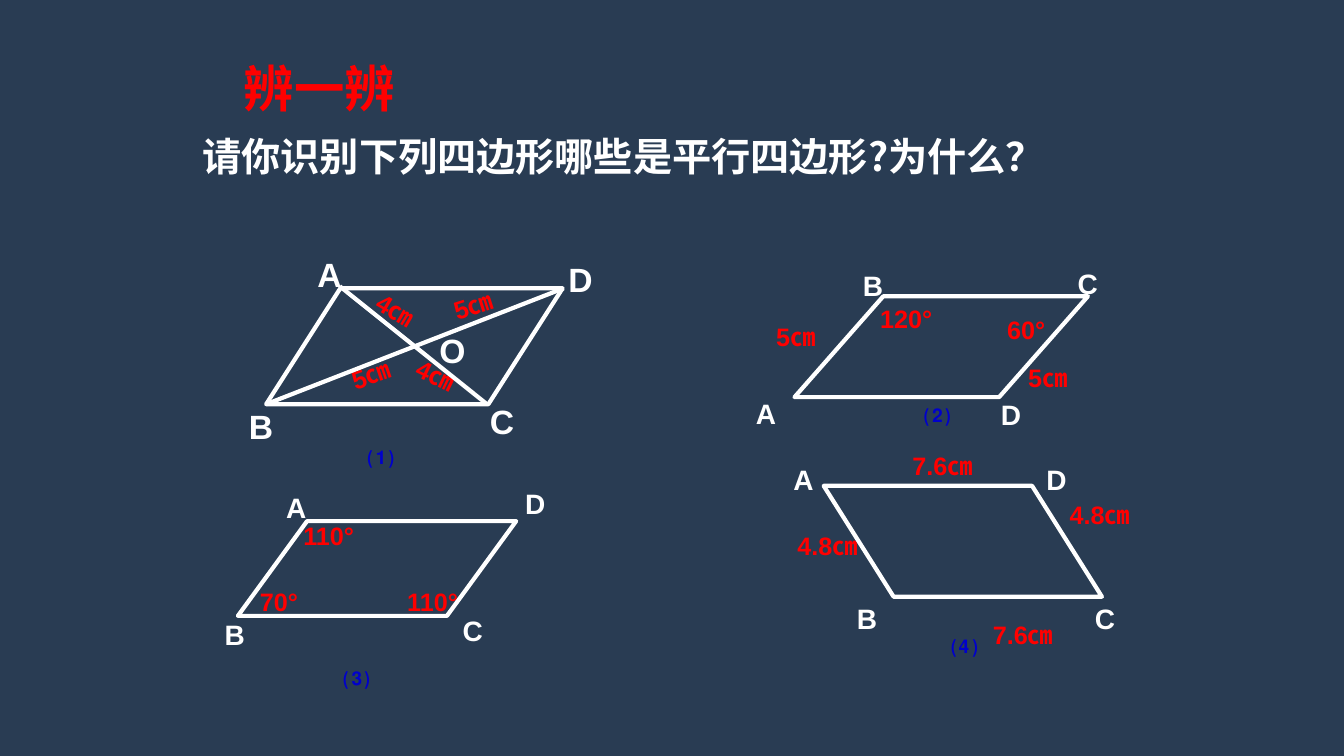
import pptx
import pptx.util
import pptx.dml.color
import pptx.enum.shapes
import pptx.enum.text
import pptx.oxml.ns
import lxml.etree

RGBColor = pptx.dml.color.RGBColor
NAVY = RGBColor(0x29, 0x3C, 0x53)
WHITE = RGBColor(0xFF, 0xFF, 0xFF)
RED = RGBColor(0xFF, 0x00, 0x00)
BLUE = RGBColor(0x00, 0x00, 0xCC)

LATIN_FONT = "Arial"
CHINESE_FONT = "Noto Sans CJK SC"
COLUMNS, ROWS = 13.33, 7.5

FIGURES = [
    {
        "number": ("⑴", 3.55, 4.31),
        "outline": (2.64, 2.86, 2.94, 1.15), "slant": 0.64,
        "vertex_size": 24, "vertex_box": (0.44, 0.5),
        "vertices": [("A", 3.05, 2.47), ("B", 2.37, 3.98), ("C", 4.76, 3.93),
                     ("D", 5.54, 2.52), ("O", 4.26, 3.22)],
        "diagonals": [((2.64, 4.01), (5.59, 2.86)), ((4.83, 4.01), (3.37, 2.84))],
        "measures": [("5㎝", 3.38, 3.48, 0.79, -19), ("5㎝", 4.39, 2.77, 0.96, -17.9),
                     ("4㎝", 3.62, 2.92, 0.78, 30.7), ("4㎝", 4.02, 3.56, 0.78, 25.8)],
    },
    {
        "number": ("⑵", 9.07, 3.89),
        "outline": (7.88, 2.94, 2.91, 1), "slant": 0.88,
        "vertices": [("A", 7.4, 3.88), ("B", 8.46, 2.61), ("C", 10.59, 2.59), ("D", 9.83, 3.89)],
        "measures": [("120°", 8.63, 2.96, 1.09), ("60°", 9.89, 3.07, 1.06),
                     ("5㎝", 7.6, 3.14, 1.23), ("5㎝", 10.1, 3.55, 1.24)],
    },
    {
        "number": ("⑶", 3.31, 6.5),
        "outline": (2.36, 5.17, 2.76, 0.94), "slant": 0.73,
        "vertices": [("A", 2.74, 4.82), ("B", 2.13, 6.08), ("C", 4.49, 6.04), ("D", 5.11, 4.78)],
        "measures": [("110°", 2.91, 5.11, 1.34), ("70°", 2.48, 5.77, 1.15),
                     ("110°", 3.94, 5.77, 1.26)],
    },
    {
        "number": ("⑷", 9.34, 6.18),
        "outline": (8.17, 4.82, 2.76, 1.1), "slant": 0.63, "mirrored": True,
        "vertices": [("A", 7.77, 4.54), ("B", 8.4, 5.92), ("C", 10.76, 5.92), ("D", 10.28, 4.54)],
        "measures": [("4.8㎝", 7.81, 5.21, 1.12), ("4.8㎝", 10.51, 4.9, 0.94),
                     ("7.6㎝", 8.95, 4.42, 0.94), ("7.6㎝", 9.75, 6.09, 0.94)],
    },
]


def write_text(text_frame, text, size, color, latin_font=LATIN_FONT):
    run = text_frame.paragraphs[0].add_run()
    run.text = text
    run.font.size = pptx.util.Pt(size)
    run.font.bold = True
    run.font.name = latin_font
    run.font.color.rgb = color
    east_asian = lxml.etree.SubElement(run.font._element, pptx.oxml.ns.qn("a:ea"))
    east_asian.set("typeface", CHINESE_FONT)
    run.font._element.find(pptx.oxml.ns.qn("a:latin")).addnext(east_asian)


class GeometrySlide:
    line_color = WHITE
    line_width = pptx.util.Pt(3)

    def __init__(self, presentation):
        self.column = presentation.slide_width / COLUMNS
        self.row = presentation.slide_height / ROWS
        self.slide = presentation.slides.add_slide(presentation.slide_layouts[6])
        background = self.slide.background.fill
        background.solid()
        background.fore_color.rgb = NAVY

    def place(self, column, row):
        return round(column * self.column), round(row * self.row)

    def draw_line(self, line):
        line.color.rgb = self.line_color
        line.width = self.line_width

    def label(self, text, left, top, width, height=0.4, rotation=0, wrap=False, **text_format):
        shape = self.slide.shapes.add_textbox(*self.place(left, top), *self.place(width, height))
        shape.rotation = rotation
        shape.text_frame.word_wrap = wrap
        shape.text_frame.auto_size = pptx.enum.text.MSO_AUTO_SIZE.SHAPE_TO_FIT_TEXT
        write_text(shape.text_frame, text, **text_format)

    def parallelogram(self, left, top, width, height, slant, mirrored):
        shape = self.slide.shapes.add_shape(
            pptx.enum.shapes.MSO_SHAPE.PARALLELOGRAM,
            *self.place(left, top), *self.place(width, height))
        shape.adjustments[0] = slant
        shape.fill.background()
        shape.shadow.inherit = False
        self.draw_line(shape.line)
        if mirrored:
            shape._element.spPr.find(pptx.oxml.ns.qn("a:xfrm")).set("flipH", "1")

    def diagonal(self, start, end):
        connector = self.slide.shapes.add_connector(
            pptx.enum.shapes.MSO_CONNECTOR.STRAIGHT, *self.place(*start), *self.place(*end))
        self.draw_line(connector.line)
        lxml.etree.SubElement(connector._element.spPr, pptx.oxml.ns.qn("a:effectLst"))

    def figure(self, number, outline, slant, vertices, measures, diagonals=(),
               mirrored=False, vertex_size=20, vertex_box=(0.4, 0.44)):
        for text, left, top, width, *rotation in measures:
            self.label(text, left, top, width, rotation=rotation[0] if rotation else 0,
                       wrap=True, size=18, color=RED)
        self.parallelogram(*outline, slant, mirrored)
        for start, end in diagonals:
            self.diagonal(start, end)
        for text, left, top in vertices:
            self.label(text, left, top, *vertex_box, size=vertex_size, color=WHITE)
        self.label(*number, 0.45, size=18, color=BLUE)


def main():
    presentation = pptx.Presentation()
    presentation.slide_width = pptx.util.Inches(COLUMNS)
    presentation.slide_height = pptx.util.Inches(ROWS)
    page = GeometrySlide(presentation)
    page.label("辨一辨", 2.32, 0.52, 1.71, 0.71, size=36, color=RED)
    page.label("请你识别下列四边形哪些是平行四边形?为什么？", 1.91, 1.26, 9.46, 0.57,
               wrap=True, size=28, color=WHITE, latin_font=CHINESE_FONT)
    for figure in FIGURES:
        page.figure(**figure)
    presentation.save("out.pptx")


if __name__ == "__main__":
    main()
